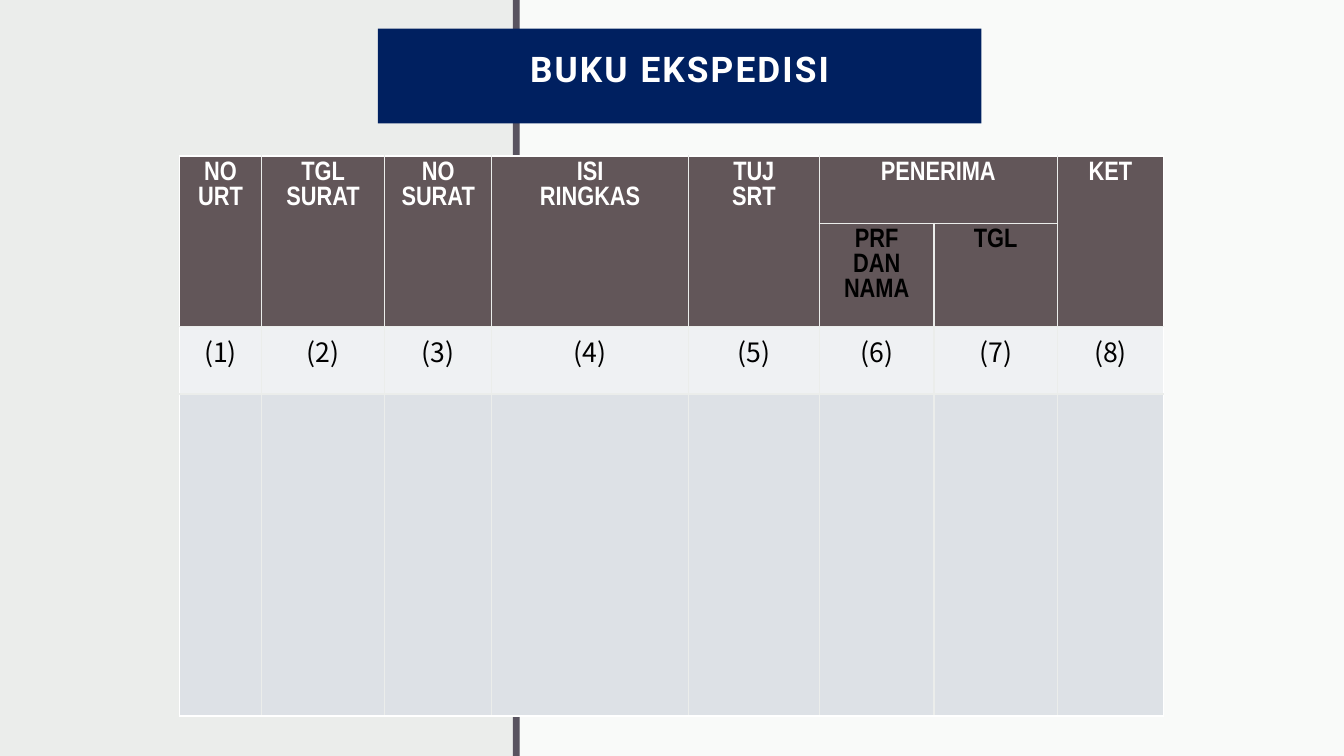
from lxml.etree import SubElement
from pptx import Presentation
from pptx.dml.color import RGBColor
from pptx.enum.shapes import MSO_SHAPE
from pptx.enum.text import MSO_ANCHOR, PP_ALIGN
from pptx.oxml.ns import qn
from pptx.util import Pt

WHITE, BLACK, PALE = "FFFFFF", "000000", "EBEDEB"
HEADER_FILL, NUMBER_FILL, ENTRY_FILL = "625659", "EFF1F3", "DDE1E6"
COLUMN_WIDTHS = [58.5, 88, 76.5, 140.5, 93.5, 82, 88, 76]
ROW_HEIGHTS = [48, 74, 48, 230]
ROW_FILLS = [HEADER_FILL, HEADER_FILL, NUMBER_FILL, ENTRY_FILL]
HEADINGS = ["NO\nURT", "TGL\nSURAT", "NO SURAT", "ISI\nRINGKAS",
            "TUJ\nSRT", "PENERIMA", None, "KET"]
RECIPIENT_HEADINGS = {5: "PRF DAN NAMA", 6: "TGL"}


def paint(fill, color, opacity=100):
    fill.solid()
    fill.fore_color.rgb = RGBColor.from_string(color)
    if opacity < 100:
        tint = fill.fore_color._xFill[0]
        SubElement(tint, qn("a:alpha"), val=str(opacity * 1000))


def write(frame, text, font="Arial Narrow", size=19, color=WHITE, bold=True, spacing=0):
    frame.word_wrap = True
    frame.text = text
    for paragraph in frame.paragraphs:
        paragraph.alignment = PP_ALIGN.CENTER
        for run in paragraph.runs:
            run.font.name = font
            run.font.size = Pt(size)
            run.font.bold = bold
            run.font.color.rgb = RGBColor.from_string(color)
            if spacing:
                run.font._element.set("spc", str(int(spacing * 100)))


def add_panel(slide, left, top, width, height, color, opacity=100):
    panel = slide.shapes.add_shape(
        MSO_SHAPE.RECTANGLE, Pt(left), Pt(top), Pt(width), Pt(height))
    panel.shadow.inherit = False
    panel.line.fill.background()
    paint(panel.fill, color, opacity)
    return panel


def add_title(slide, text):
    banner = add_panel(slide, 270, 20.4, 431, 67.7, "002060")
    frame = banner.text_frame
    frame.vertical_anchor = MSO_ANCHOR.MIDDLE
    frame.margin_top = Pt(8.6)
    frame.margin_bottom = Pt(20)
    write(frame, text, font="Roboto", size=25.2, spacing=1.5)


def set_borders(cell, colors):
    properties = cell._tc.get_or_add_tcPr()
    for side, color in colors.items():
        border = SubElement(properties, qn(f"a:ln{side}"), w=str(Pt(1)))
        border_fill = SubElement(border, qn("a:solidFill"))
        SubElement(border_fill, qn("a:srgbClr"), val=color)


def add_register(slide):
    row_count, column_count = len(ROW_HEIGHTS), len(COLUMN_WIDTHS)
    register = slide.shapes.add_table(
        row_count, column_count, Pt(128.3), Pt(111.5),
        Pt(sum(COLUMN_WIDTHS)), Pt(sum(ROW_HEIGHTS))).table
    register.first_row = register.horz_banding = False
    for column, width in zip(register.columns, COLUMN_WIDTHS):
        column.width = Pt(width)
    for r, (height, color) in enumerate(zip(ROW_HEIGHTS, ROW_FILLS)):
        register.rows[r].height = Pt(height)
        for c in range(column_count):
            cell = register.cell(r, c)
            set_borders(cell, {
                "L": WHITE if c == 0 else PALE,
                "R": WHITE if c == column_count - 1 else PALE,
                "T": WHITE if r == 0 else PALE,
                "B": WHITE if r == row_count - 1 else PALE})
            paint(cell.fill, color)

    for c, heading in enumerate(HEADINGS):
        if c not in RECIPIENT_HEADINGS:
            register.cell(0, c).merge(register.cell(1, c))
        if heading:
            write(register.cell(0, c).text_frame, heading)
        write(register.cell(2, c).text_frame, f"({c + 1})",
              font="Noto Sans CJK JP", color=BLACK, bold=False)
    register.cell(0, 5).merge(register.cell(0, 6))
    for c, heading in RECIPIENT_HEADINGS.items():
        write(register.cell(1, c).text_frame, heading, color=BLACK)


def main():
    presentation = Presentation()
    presentation.slide_width, presentation.slide_height = Pt(960), Pt(540)
    slide = presentation.slides.add_slide(presentation.slide_layouts[6])
    paint(slide.background.fill, PALE)
    add_panel(slide, 371.5, 0, 588.5, 540, WHITE, opacity=75)
    add_panel(slide, 366.3, 0, 5, 540, "595460")
    add_title(slide, "BUKU EKSPEDISI")
    add_register(slide)
    presentation.save("out.pptx")


if __name__ == "__main__":
    main()
